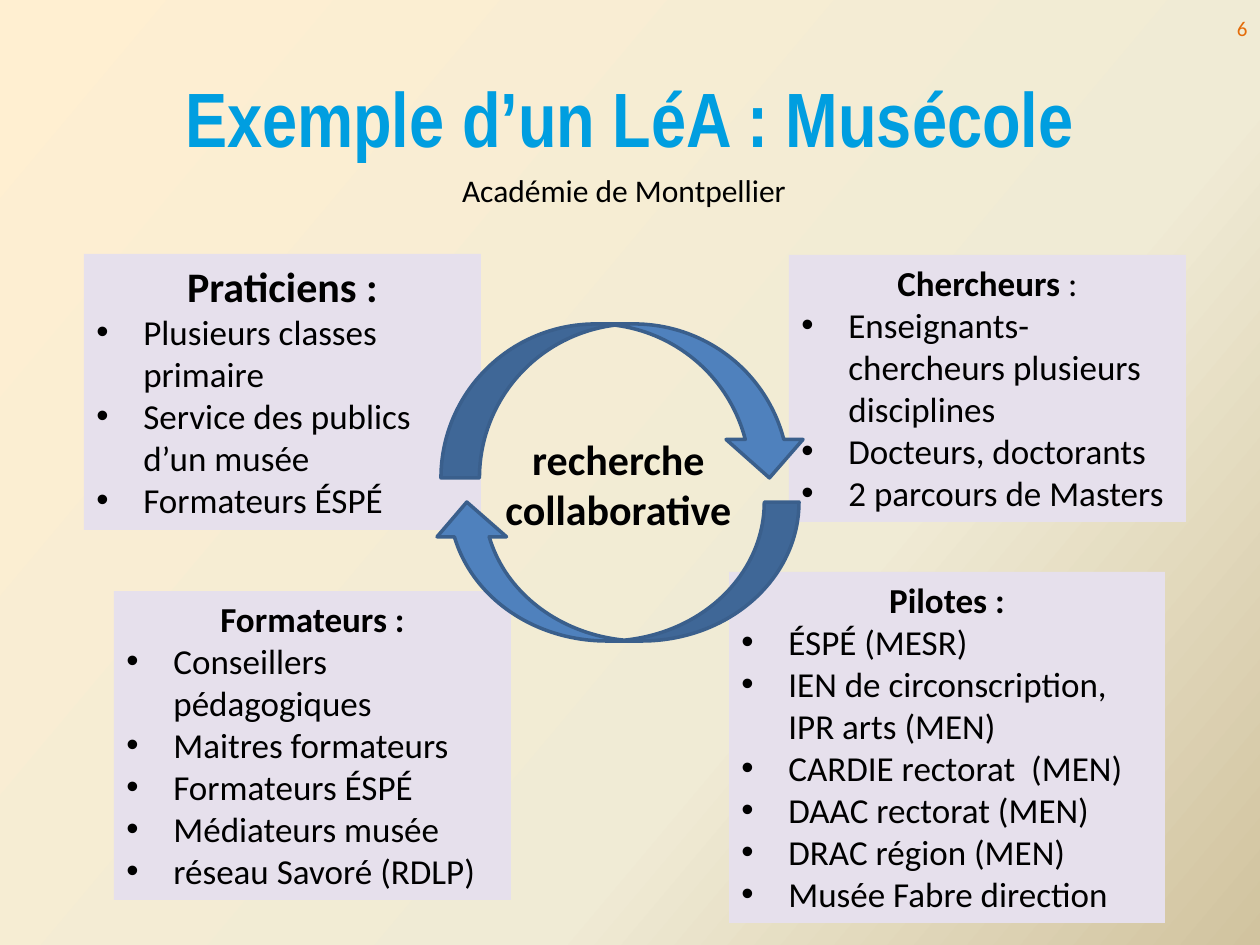
import copy

import pptx
import pptx.dml.color
import pptx.enum.shapes
import pptx.enum.text
import pptx.oxml
import pptx.oxml.ns
import pptx.util

EMU_PER_PX = 914400 / 126
BULLET_INDENT = 47
ALIGN = pptx.enum.text.PP_ALIGN
ANCHOR = pptx.enum.text.MSO_ANCHOR
AUTO_SIZE = pptx.enum.text.MSO_AUTO_SIZE
SHAPE = pptx.enum.shapes.MSO_SHAPE

COLORS = {
    "title": "009EE0",
    "number": "E46C0A",
    "text": "000000",
    "panel": "E6E0EC",
    "arrow": "4F81BD",
    "arrow line": "3A5F8C",
}
BACKGROUND_STOPS = [(0, "FFEFD1"), (0.65, "F0EBD5"), (1, "D1C39F")]

# Each panel: place, heading size, heading, text after the heading, bulleted items
PANELS = [
    ((84, 254, 397, 276), 24, "Praticiens :", "",
     ["Plusieurs classes primaire", "Service des publics d’un musée", "Formateurs ÉSPÉ"]),
    ((789, 255, 397, 267), 20, "Chercheurs", " :",
     ["Enseignants-chercheurs plusieurs disciplines", "Docteurs, doctorants",
      "2 parcours de Masters"]),
    ((729, 572, 436, 351), 20, "Pilotes :", "",
     ["ÉSPÉ (MESR)", "IEN de circonscription, \vIPR arts (MEN)", "CARDIE rectorat  (MEN)",
      "DAAC rectorat (MEN)", "DRAC région (MEN)", "Musée Fabre direction"]),
    ((114, 591, 397, 309), 20, "Formateurs :", "",
     ["Conseillers pédagogiques", "Maitres formateurs", "Formateurs ÉSPÉ",
      "Médiateurs musée", "réseau Savoré (RDLP)"]),
]


def px(length):
    return pptx.util.Emu(round(length * EMU_PER_PX))


def place(box):
    return [px(length) for length in box]


def rgb(value):
    return pptx.dml.color.RGBColor.from_string(value)


def format_run(run, size, color="text", bold=False, name="Calibri"):
    values = {"size": pptx.util.Pt(size), "bold": bold, "name": name}
    for attribute, value in values.items():
        setattr(run.font, attribute, value)
    run.font.color.rgb = rgb(COLORS[color])


def write_paragraph(paragraph, text, alignment, **format_values):
    paragraph.text = text
    paragraph.alignment = alignment
    for run in paragraph.runs:
        format_run(run, **format_values)


def add_bullet(paragraph):
    properties = paragraph._p.get_or_add_pPr()
    properties.set("marL", str(px(BULLET_INDENT)))
    properties.set("indent", str(-px(BULLET_INDENT)))
    for tag, attribute, value in (("a:buFont", "typeface", "Arial"), ("a:buChar", "char", "•")):
        element = pptx.oxml.parse_xml(f"<{tag} {pptx.oxml.ns.nsdecls('a')}/>")
        element.set(attribute, value)
        properties.append(element)


def set_background(slide):
    fill = slide.background.fill
    fill.gradient()
    fill.gradient_angle = 320
    stop_list = slide.element.find(".//" + pptx.oxml.ns.qn("a:gsLst"))
    stop_list.append(copy.deepcopy(stop_list[-1]))
    for stop, (position, color) in zip(fill.gradient_stops, BACKGROUND_STOPS):
        stop.position = position
        stop.color.rgb = rgb(color)


def add_title(slide, box, text):
    title = slide.shapes.title
    title.left, title.top, title.width, title.height = place(box)
    frame = title.text_frame
    frame.auto_size = AUTO_SIZE.NONE
    frame.vertical_anchor = ANCHOR.MIDDLE
    write_paragraph(frame.paragraphs[0], text, ALIGN.CENTER,
                    size=44, color="title", bold=True, name="Arial Narrow")


def add_text(shapes, box, lines, alignment=ALIGN.CENTER, anchor=ANCHOR.TOP, wrap=True,
             **format_values):
    frame = shapes.add_textbox(*place(box)).text_frame
    frame.word_wrap = wrap
    frame.vertical_anchor = anchor
    for index, line in enumerate(lines):
        paragraph = frame.add_paragraph() if index else frame.paragraphs[0]
        write_paragraph(paragraph, line, alignment, **format_values)


def add_filled_shape(shapes, kind, box, color):
    shape = shapes.add_shape(kind, *place(box))
    shape.shadow.inherit = False
    shape.fill.solid()
    shape.fill.fore_color.rgb = rgb(COLORS[color])
    return shape


def add_panel(slide, box, heading_size, heading, suffix, items):
    panel = add_filled_shape(slide.shapes, SHAPE.RECTANGLE, box, "panel")
    panel.line.fill.background()
    frame = panel.text_frame
    frame.word_wrap = True
    frame.vertical_anchor = ANCHOR.TOP
    paragraph = frame.paragraphs[0]
    write_paragraph(paragraph, heading, ALIGN.CENTER, size=heading_size, bold=True)
    if suffix:
        run = paragraph.add_run()
        run.text = suffix
        format_run(run, heading_size)
    for item in items:
        paragraph = frame.add_paragraph()
        add_bullet(paragraph)
        write_paragraph(paragraph, item, ALIGN.LEFT, size=20)


def add_cycle(slide):
    shapes = slide.shapes.add_group_shape().shapes
    for box, rotation in (((441, 324, 367, 154), 0), ((432, 502, 367, 139), 180)):
        arrow = add_filled_shape(shapes, SHAPE.CURVED_DOWN_ARROW, box, "arrow")
        arrow.rotation = rotation
        arrow.line.color.rgb = rgb(COLORS["arrow line"])
        arrow.line.width = pptx.util.Pt(2)
    add_text(shapes, (491, 427, 255, 115), ["recherche", "collaborative"], wrap=False,
             size=24, bold=True)


def main():
    presentation = pptx.Presentation()
    presentation.slide_width, presentation.slide_height = px(1260), px(945)
    slide = presentation.slides.add_slide(presentation.slide_layouts[5])
    set_background(slide)
    add_title(slide, (63, 38, 1134, 158), "Exemple d’un LéA : Musécole")
    add_text(slide.shapes, (966, 3, 294, 50), ["6"], alignment=ALIGN.RIGHT,
             anchor=ANCHOR.MIDDLE, size=12, color="number")
    for panel in PANELS:
        add_panel(slide, *panel)
    add_text(slide.shapes, (123, 165, 1002, 50), ["Académie de Montpellier"], size=18)
    add_cycle(slide)
    presentation.save("out.pptx")


if __name__ == "__main__":
    main()
